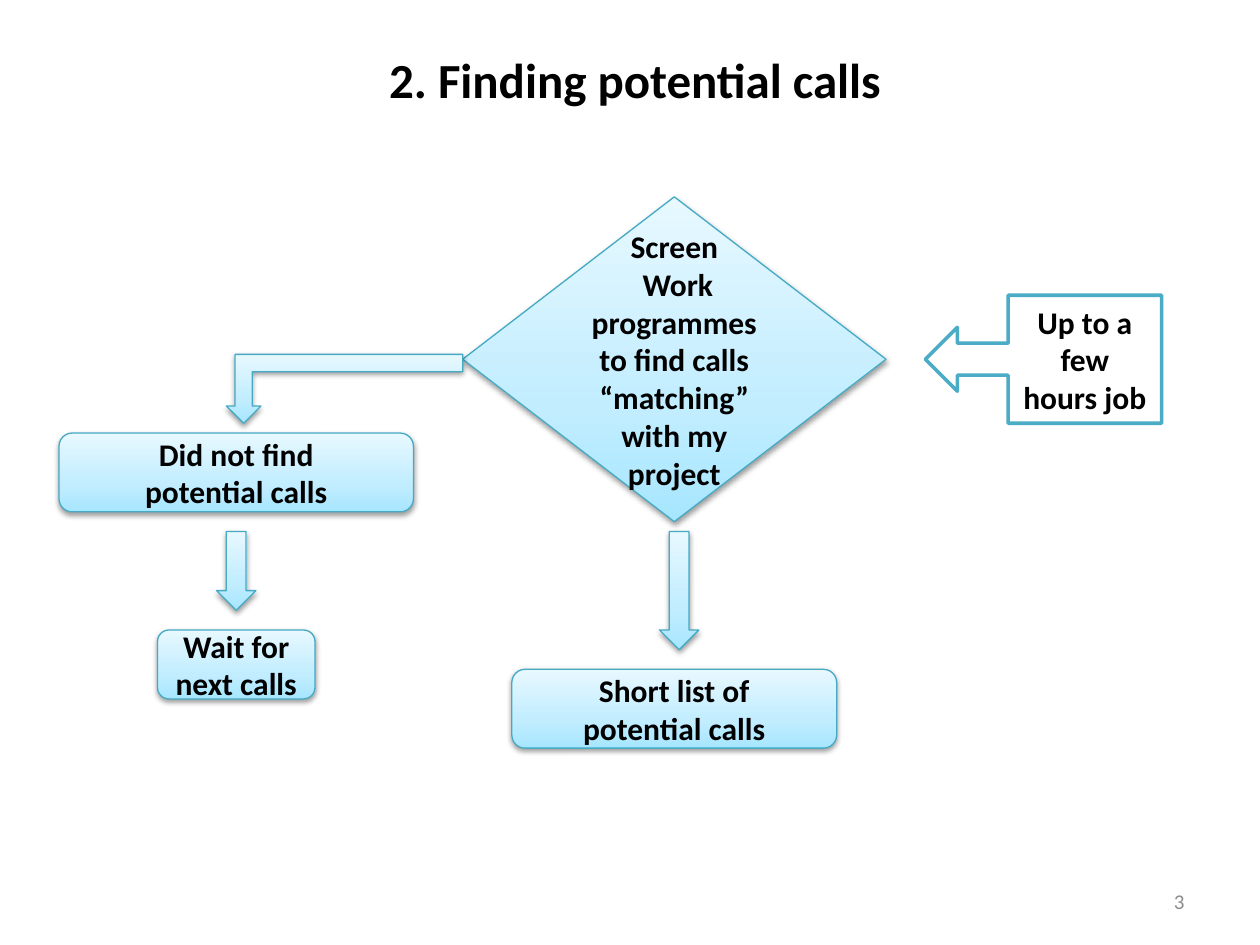
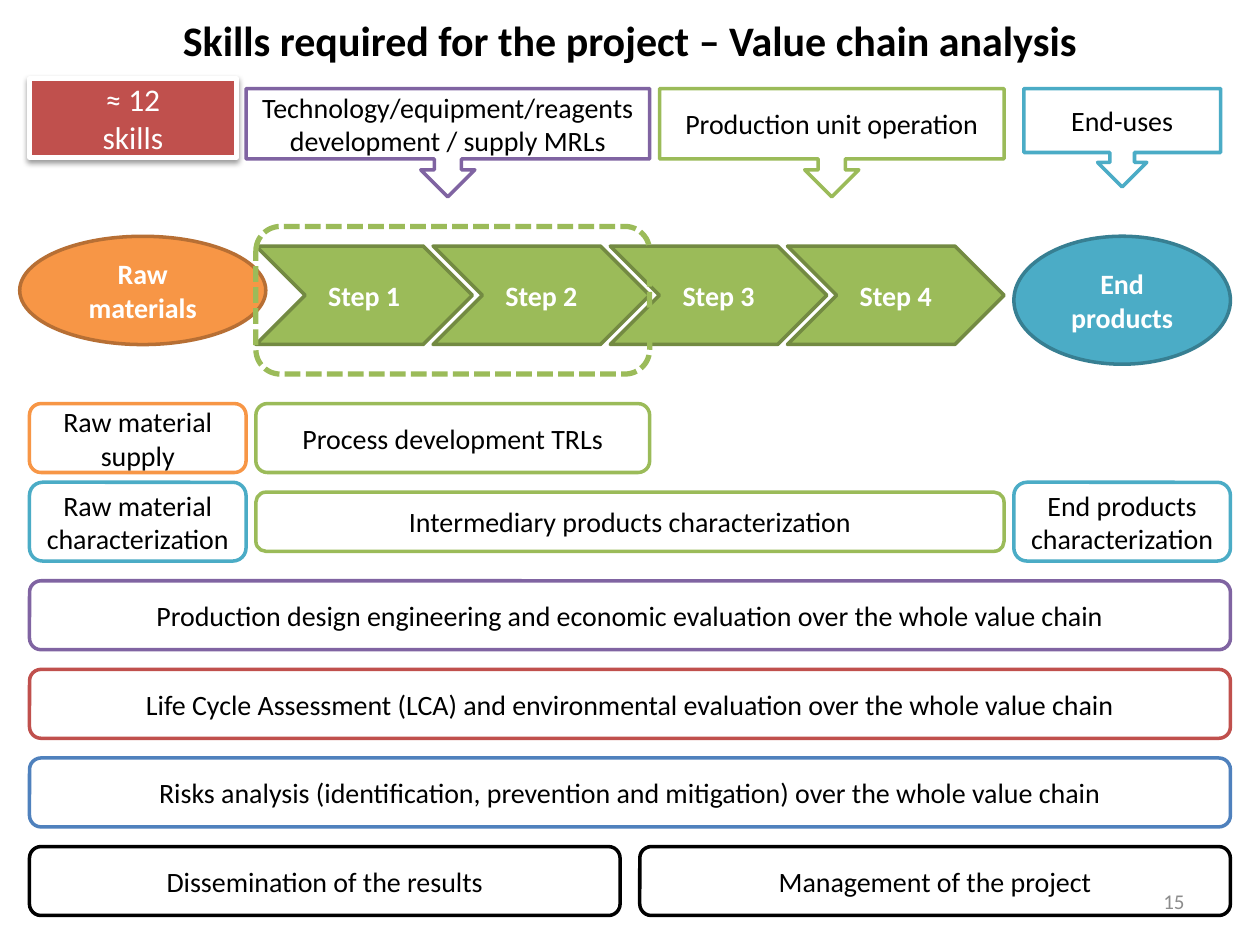
from dataclasses import dataclass, replace
from typing import NamedTuple, Optional
from copy import deepcopy
from lxml import etree
from pptx import Presentation
from pptx import util as u
from pptx.dml.color import RGBColor
from pptx.enum import dml, shapes, text
from pptx.oxml import ns

# Colours and font
BLACK = RGBColor(0x00, 0x00, 0x00)
WHITE = RGBColor(0xFF, 0xFF, 0xFF)
GREY = RGBColor(0x8C, 0x8C, 0x8C)
AQUA = RGBColor(0x4B, 0xAC, 0xC6)
AQUA_RIM = RGBColor(0x46, 0xAA, 0xC5)
AQUA_DARK = RGBColor(0x37, 0x7F, 0x92)
GREEN = RGBColor(0x9B, 0xBB, 0x59)
GREEN_DARK = RGBColor(0x73, 0x8A, 0x42)
ORANGE = RGBColor(0xF7, 0x96, 0x46)
ORANGE_DARK = RGBColor(0xB7, 0x6F, 0x34)
PURPLE = RGBColor(0x80, 0x64, 0xA2)
RED = RGBColor(0xC0, 0x50, 0x4D)
BLUE = RGBColor(0x4F, 0x81, 0xBD)
SKY = ((0, RGBColor(0xA7, 0xE6, 0xFF)),
       (0.35, RGBColor(0xC1, 0xED, 0xFF)),
       (1, RGBColor(0xE7, 0xF8, 0xFF)))
FONT = "Calibri"

# Grid of square cells over the slide
WIDE, HIGH = u.Inches(10), u.Inches(7.5)
COLS, ROWS = 128, 96

KIND = shapes.MSO_SHAPE
ROUND = KIND.ROUNDED_RECTANGLE
CALL = KIND.DOWN_ARROW_CALLOUT


class Cell(NamedTuple):
    """Left column, top row, columns wide, rows high."""
    col: float
    row: float
    wide: float
    high: float


@dataclass(frozen=True)
class Look:
    line: RGBColor
    fill: Optional[RGBColor] = WHITE
    width: float = 2
    ink: RGBColor = BLACK
    size: int = 16
    bold: bool = False
    sky: bool = False
    shade: bool = False
    dash: bool = False


class Box(NamedTuple):
    kind: KIND
    cell: Cell
    look: Look
    words: str = ""
    turn: int = 0


FLOW = Look(AQUA_RIM, width=0.75, size=18, bold=True, sky=True, shade=True)
STEP = Look(GREEN_DARK, GREEN, ink=WHITE, bold=True)


def place(cell: Cell) -> tuple:
    """Turn grid cells into lengths."""
    return (round(WIDE * cell.col / COLS), round(HIGH * cell.row / ROWS),
            round(WIDE * cell.wide / COLS), round(HIGH * cell.high / ROWS))


def write(frame, words: str, size: int, ink: RGBColor, bold: bool,
          align=text.PP_ALIGN.CENTER) -> None:
    frame.text = words
    frame.word_wrap = True
    frame.auto_size = text.MSO_AUTO_SIZE.NONE
    frame.vertical_anchor = text.MSO_ANCHOR.MIDDLE
    for para in frame.paragraphs:
        para.alignment = align
        font = para.font
        font.name, font.size, font.bold = FONT, u.Pt(size), bold
        font.color.rgb = ink


def blend(fill, turn: int) -> None:
    """Sky gradient, light at the top however the shape is turned."""
    fill.gradient()
    first = fill.gradient_stops[0]
    stops = fill._fill._gradFill.find(ns.qn("a:gsLst"))
    stops.insert(1, deepcopy(stops[0]))
    for stop, (share, tint) in zip(fill.gradient_stops, SKY):
        stop.position = share
        stop.color.rgb = tint
    fill.gradient_angle = (90 + turn) % 360


def shade(shape) -> None:
    """Soft shadow straight below."""
    effects = shape._element.spPr.find(ns.qn("a:effectLst"))
    drop = etree.SubElement(effects, ns.qn("a:outerShdw"), blurRad="40000",
                            dist="20000", dir="5400000", rotWithShape="0")
    tint = etree.SubElement(drop, ns.qn("a:srgbClr"), val=str(BLACK))
    etree.SubElement(tint, ns.qn("a:alpha"), val="38000")


def draw(slide, box: Box) -> None:
    look = box.look
    shape = slide.shapes.add_shape(box.kind, *place(box.cell))
    shape.rotation = box.turn
    if look.sky:
        blend(shape.fill, box.turn)
    elif look.fill is None:
        shape.fill.background()
    else:
        shape.fill.solid()
        shape.fill.fore_color.rgb = look.fill
    shape.line.color.rgb = look.line
    shape.line.width = u.Pt(look.width)
    if look.dash:
        shape.line.dash_style = dml.MSO_LINE.SQUARE_DOT
    shape.shadow.inherit = False
    if look.shade:
        shade(shape)
    if box.words:
        write(shape.text_frame, box.words, look.size, look.ink, look.bold)


def build(deck, title: str, cell: Cell, size: int, page: int,
          boxes: list) -> None:
    """One slide: title, boxes from back to front, page number."""
    slide = deck.slides.add_slide(deck.slide_layouts[5])
    head = slide.shapes.title
    head.left, head.top, head.width, head.height = place(cell)
    write(head.text_frame, title, size, BLACK, True)
    for box in boxes:
        draw(slide, box)
    foot = slide.shapes.add_textbox(*place(Cell(91.75, 89, 29.85, 5.1)))
    write(foot.text_frame, str(page), 12, GREY, False, text.PP_ALIGN.RIGHT)


def calls() -> list:
    """Flow chart for the search."""
    return [
        Box(KIND.FLOWCHART_DECISION, Cell(47, 20, 43, 33), FLOW,
            "Screen\n Work programmes to find calls “matching” "
            "with my project"),
        Box(KIND.BENT_UP_ARROW, Cell(23, 36, 24, 7), FLOW, turn=180),
        Box(ROUND, Cell(52, 68, 33, 8), FLOW,
            "Short list of\n potential calls "),
        Box(KIND.DOWN_ARROW, Cell(67, 54, 4, 12), FLOW),
        Box(ROUND, Cell(6, 44, 36, 8), FLOW,
            "Did not find\n potential calls "),
        Box(ROUND, Cell(16, 64, 16, 7), FLOW, "Wait for next calls"),
        Box(KIND.DOWN_ARROW, Cell(22, 54, 4, 8), FLOW),
        Box(KIND.LEFT_ARROW_CALLOUT, Cell(94, 30, 24, 13),
            Look(AQUA, size=18, bold=True), "Up to a few hours job"),
    ]


def chain() -> list:
    """Value chain with the skills above and below it."""
    left, mid, right, side = 3, 26, 103, 22
    steps = [Box(KIND.CHEVRON, Cell(mid + 18 * i, 25, side, 10), STEP,
                 f"Step {i + 1}") for i in range(4)]
    ends = [
        Box(KIND.OVAL, Cell(2, 24, 25, 11),
            replace(STEP, line=ORANGE_DARK, fill=ORANGE), "Raw materials"),
        Box(KIND.OVAL, Cell(right, 24, side, 13),
            replace(STEP, line=AQUA_DARK, fill=AQUA), "End products"),
        Box(ROUND, Cell(mid, 23, 40, 15),
            Look(GREEN, None, width=3, dash=True)),
    ]
    skills = [
        Box(ROUND, Cell(mid, 41, 40, 7), Look(GREEN),
            "Process development TRLs"),
        Box(ROUND, Cell(left, 41, side, 7), Look(ORANGE),
            "Raw material supply"),
        Box(ROUND, Cell(left, 49, side, 8), Look(AQUA),
            "Raw material characterization"),
        Box(ROUND, Cell(mid, 50, 76, 6), Look(GREEN),
            "Intermediary products characterization"),
        Box(ROUND, Cell(right, 49, side, 8), Look(AQUA),
            "End products characterization"),
    ]
    # Full-width rows, then a last row of two halves
    whole = [
        (PURPLE, "Production design engineering and economic evaluation"),
        (RED, "Life Cycle Assessment (LCA) and environmental evaluation"),
        (BLUE, "Risks analysis (identification, prevention and mitigation)"),
    ]
    top, pitch = 59, 9
    rows = [Box(ROUND, Cell(left, top + pitch * i, 122, 7), Look(tint),
                f"{words} over the whole value chain")
            for i, (tint, words) in enumerate(whole)]
    halves = [Box(ROUND, Cell(left + 62 * i, top + pitch * len(whole), 60, 7),
                  Look(BLACK), words)
              for i, words in enumerate(("Dissemination of the results",
                                         "Management of the project"))]
    tops = [
        Box(CALL, Cell(25, 9, 41, 11), Look(PURPLE),
            "Technology/equipment/reagents development / supply MRLs"),
        Box(KIND.RECTANGLE, Cell(left, 8, 21, 8),
            Look(WHITE, RED, width=3, ink=WHITE, size=18, shade=True),
            "≈ 12\nskills"),
        Box(CALL, Cell(104, 9, 20, 10), Look(AQUA), "End-uses"),
        Box(CALL, Cell(67, 9, 35, 11), Look(GREEN),
            "Production unit operation"),
    ]
    return steps + ends + skills + rows + halves + tops


def main() -> None:
    deck = Presentation()
    deck.slide_width, deck.slide_height = WIDE, HIGH
    build(deck, "2. Finding potential calls", Cell(7, 0, 115, 16), 28, 3,
          calls())
    build(deck, "Skills required for the project – Value chain analysis",
          Cell(0, -4, COLS, 16), 24, 15, chain())
    deck.save("out.pptx")


if __name__ == "__main__":
    main()
